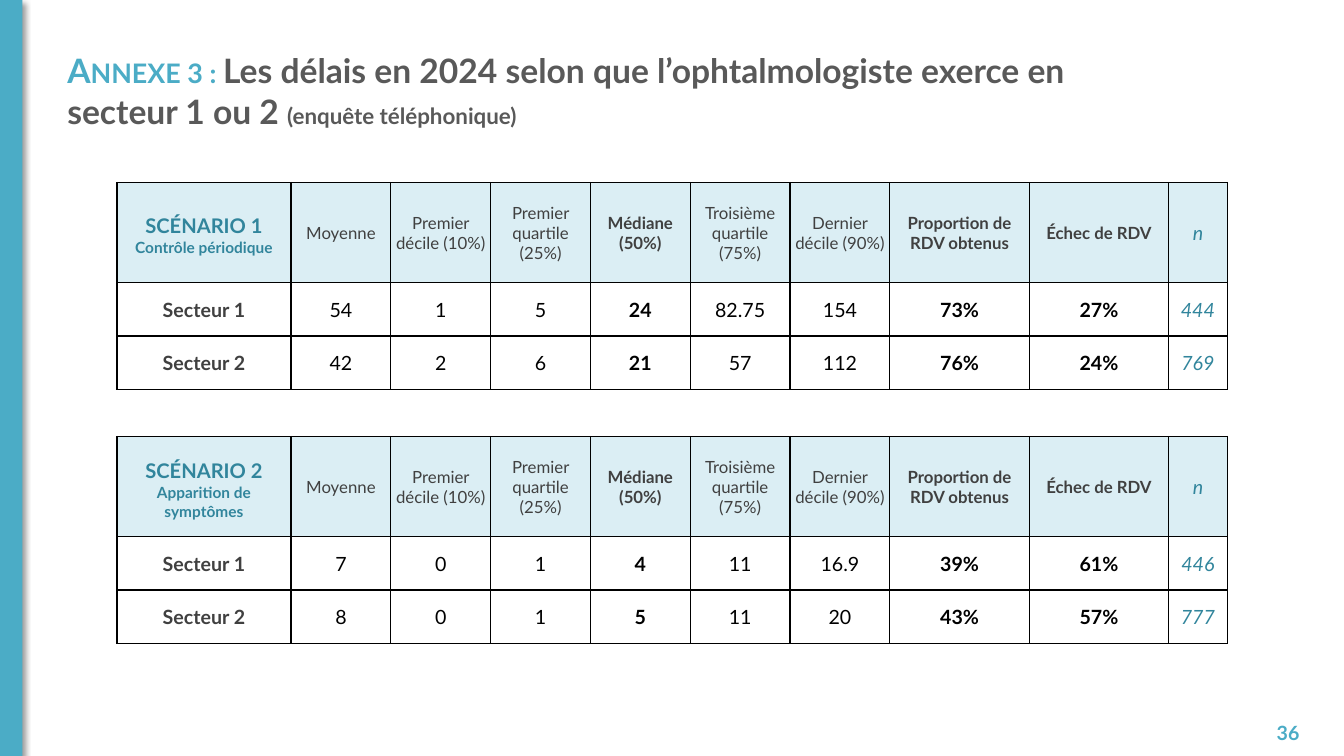
from dataclasses import dataclass

from lxml.etree import SubElement
from pptx import Presentation
from pptx.dml.color import RGBColor
from pptx.enum.shapes import MSO_SHAPE
from pptx.enum.text import MSO_ANCHOR, PP_ALIGN
from pptx.oxml import parse_xml
from pptx.oxml.ns import nsdecls, qn
from pptx.slide import Slide
from pptx.table import _Cell
from pptx.text.text import _Run
from pptx.util import Pt


@dataclass(frozen=True)
class Theme:
    font: str = "Lato"
    accent: str = "4BACC6"
    teal: str = "31859C"
    pale: str = "DBEEF4"
    title: str = "595959"
    label: str = "404040"
    black: str = "000000"
    title_size: float = 24
    note_size: float = 16
    scenario_size: float = 18
    body_size: float = 14
    header_size: float = 12
    detail_size: float = 11


@dataclass(frozen=True)
class Style:
    size: float
    color: str
    bold: bool = False
    italic: bool = False
    small_caps: bool = False


@dataclass(frozen=True)
class Column:
    header: str
    width: float
    header_style: Style
    body_style: Style


@dataclass(frozen=True)
class Scenario:
    name: str
    detail: str
    top: float
    rows: tuple[tuple[str, ...], ...]


T = Theme()
LEFT = 83.5
LABEL_WIDTH = 124.4
ROW_HEIGHTS = (71.4, 38.3, 38.3)
NARROW, WIDE = 71.3, 99.6

SCENARIO = Style(T.scenario_size, T.teal, bold=True, small_caps=True)
DETAIL = Style(T.detail_size, T.teal, bold=True)
SECTOR = Style(T.body_size, T.label, bold=True)
HEAD = Style(T.header_size, T.label)
HEAD_BOLD = Style(T.header_size, T.label, bold=True)
VALUE = Style(T.body_size, T.black)
VALUE_BOLD = Style(T.body_size, T.black, bold=True)
COUNT = Style(T.body_size, T.teal, italic=True)

COLUMNS = (
    Column("Moyenne", NARROW, HEAD, VALUE),
    Column("Premier décile (10%)", NARROW, HEAD, VALUE),
    Column("Premier quartile\n(25%)", NARROW, HEAD, VALUE),
    Column("Médiane\n(50%)", NARROW, HEAD_BOLD, VALUE_BOLD),
    Column("Troisième quartile (75%)", NARROW, HEAD, VALUE),
    Column("Dernier décile (90%)", NARROW, HEAD, VALUE),
    Column("Proportion de RDV obtenus", WIDE, HEAD_BOLD, VALUE_BOLD),
    Column("Échec de RDV", WIDE, HEAD_BOLD, VALUE_BOLD),
    Column("n", 41.8, COUNT, COUNT),
)

SCENARIOS = (
    Scenario("scénario 1", "Contrôle périodique", 130.3, (
        ("Secteur 1", "54", "1", "5", "24", "82.75", "154", "73%", "27%", "444"),
        ("Secteur 2", "42", "2", "6", "21", "57", "112", "76%", "24%", "769"),
    )),
    Scenario("scénario 2", "Apparition de symptômes", 311.8, (
        ("Secteur 1", "7", "0", "1", "4", "11", "16.9", "39%", "61%", "446"),
        ("Secteur 2", "8", "0", "1", "5", "11", "20", "43%", "57%", "777"),
    )),
)

TITLE = (
    ("Annexe 3 : ", Style(T.title_size, T.accent, bold=True, small_caps=True)),
    ("Les délais en 2024 selon que l’ophtalmologiste exerce en secteur 1 ou 2 ",
     Style(T.title_size, T.title, bold=True)),
    ("(enquête téléphonique)", Style(T.note_size, T.title, bold=True)),
)


def format_run(r: _Run, style: Style) -> None:
    r.font.name = T.font
    r.font.size = Pt(style.size)
    r.font.bold = style.bold
    r.font.italic = style.italic
    r.font.color.rgb = RGBColor.from_string(style.color)
    if style.small_caps:
        r._r.get_or_add_rPr().set("cap", "small")


def add_borders(cell: _Cell) -> None:
    tc_pr = cell._tc.get_or_add_tcPr()
    for i, side in enumerate(("lnL", "lnR", "lnT", "lnB")):
        tc_pr.insert(i, parse_xml(
            f'<a:{side} {nsdecls("a")} w="{Pt(1)}"><a:solidFill>'
            f'<a:srgbClr val="{T.black}"/></a:solidFill></a:{side}>'))


def fill_cell(cell: _Cell, text: str, styles: tuple[Style, ...], header: bool) -> None:
    cell.margin_left = cell.margin_right = cell.margin_top = Pt(0.75)
    cell.margin_bottom = Pt(0)
    cell.vertical_anchor = MSO_ANCHOR.MIDDLE
    if header:
        cell.fill.solid()
        cell.fill.fore_color.rgb = RGBColor.from_string(T.pale)
    else:
        cell.fill.background()
    add_borders(cell)
    tf = cell.text_frame
    tf.text = text
    for i, p in enumerate(tf.paragraphs):
        p.alignment = PP_ALIGN.CENTER
        for r in p.runs:
            format_run(r, styles[min(i, len(styles) - 1)])


def add_scenario(s: Slide, scenario: Scenario) -> None:
    widths = (LABEL_WIDTH, *(c.width for c in COLUMNS))
    table = s.shapes.add_table(
        len(ROW_HEIGHTS), len(widths), Pt(LEFT), Pt(scenario.top),
        Pt(sum(widths)), Pt(sum(ROW_HEIGHTS))).table
    table.first_row = table.horz_banding = False
    for column, width in zip(table.columns, widths):
        column.width = Pt(width)
    for row, height in zip(table.rows, ROW_HEIGHTS):
        row.height = Pt(height)
    fill_cell(table.cell(0, 0), f"{scenario.name}\n{scenario.detail}",
              (SCENARIO, DETAIL), True)
    for j, c in enumerate(COLUMNS, 1):
        fill_cell(table.cell(0, j), c.header, (c.header_style,), True)
    body_styles = (SECTOR, *(c.body_style for c in COLUMNS))
    for i, values in enumerate(scenario.rows, 1):
        for j, (value, style) in enumerate(zip(values, body_styles)):
            fill_cell(table.cell(i, j), value, (style,), False)


def add_side_bar(s: Slide, height: float) -> None:
    sp = s.shapes.add_shape(MSO_SHAPE.RECTANGLE, Pt(0), Pt(0), Pt(16), Pt(height))
    sp.fill.solid()
    sp.fill.fore_color.rgb = RGBColor.from_string(T.accent)
    sp.line.fill.background()
    sp.shadow.inherit = False
    effects = sp._element.spPr.find(qn("a:effectLst"))
    shadow = SubElement(effects, qn("a:outerShdw"), blurRad=str(Pt(4)),
                        dist=str(Pt(3)), dir="2700000", rotWithShape="0")
    color = SubElement(shadow, qn("a:srgbClr"), val=T.black)
    SubElement(color, qn("a:alpha"), val="40000")


def add_title(s: Slide) -> None:
    tf = s.shapes.add_textbox(Pt(41), Pt(32.4), Pt(729.4), Pt(78.5)).text_frame
    tf.word_wrap = True
    for text, style in TITLE:
        r = tf.paragraphs[0].add_run()
        r.text = text
        format_run(r, style)


def add_page_number(s: Slide) -> None:
    tf = s.shapes.add_textbox(Pt(881.3), Pt(509), Pt(54), Pt(28.8)).text_frame
    tf.word_wrap = True
    tf.vertical_anchor = MSO_ANCHOR.MIDDLE
    tf.text = "36"
    p = tf.paragraphs[0]
    p.alignment = PP_ALIGN.RIGHT
    format_run(p.runs[0], Style(T.body_size, T.accent, bold=True))


def main() -> None:
    prs = Presentation()
    prs.slide_width, prs.slide_height = Pt(960), Pt(540)
    s = prs.slides.add_slide(prs.slide_layouts[6])
    add_side_bar(s, 540)
    add_title(s)
    for scenario in SCENARIOS:
        add_scenario(s, scenario)
    add_page_number(s)
    prs.save("out.pptx")


if __name__ == "__main__":
    main()
